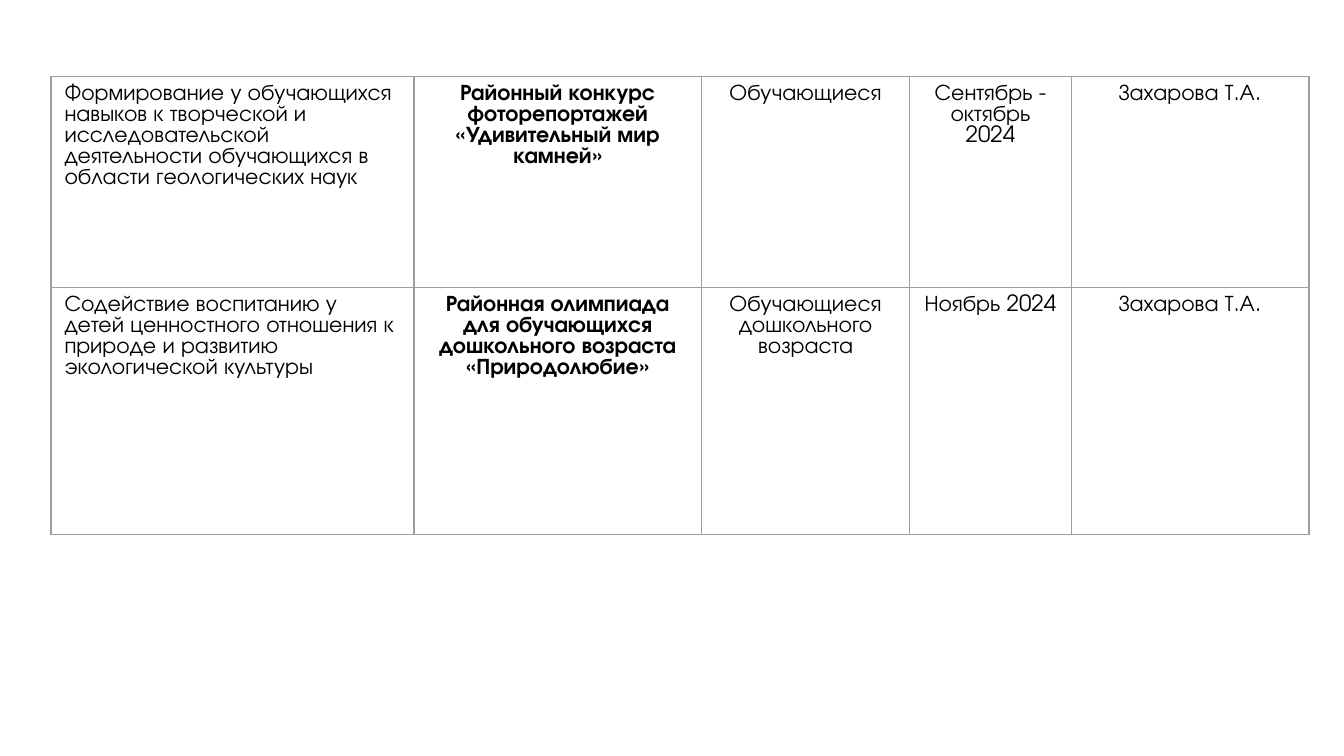
"""Build a slide with a table of district events for pupils."""
from typing import NamedTuple

import pptx
import pptx.dml.color
import pptx.enum.text
import pptx.oxml
import pptx.oxml.ns
import pptx.slide
import pptx.table
import pptx.util
from pptx.util import Inches

BLACK = pptx.dml.color.RGBColor(0x00, 0x00, 0x00)
GREY = pptx.dml.color.RGBColor(0x9E, 0x9E, 0x9E)
FONT = "TeX Gyre Adventor"
WIDTHS = (2.7, 2.14, 1.55, 1.2, 1.77)
SIDES = ("lnL", "lnR", "lnT", "lnB")


class Event(NamedTuple):
    height: float
    goal: str
    title: str
    group: str
    date: str
    lead: str


EVENTS = (
    Event(
        1.57,
        "Формирование у обучающихся навыков к творческой и исследовательской "
        "деятельности обучающихся в области геологических наук",
        "Районный конкурс фоторепортажей «Удивительный мир камней»",
        "Обучающиеся",
        "Сентябрь - октябрь 2024",
        "Захарова Т.А.",
    ),
    Event(
        1.84,
        "Содействие воспитанию у детей ценностного отношения к природе "
        "и развитию экологической культуры",
        "Районная олимпиада для обучающихся дошкольного возраста «Природолюбие»",
        "Обучающиеся дошкольного возраста",
        "Ноябрь 2024",
        "Захарова Т.А.",
    ),
)


def add_edges(cell: pptx.table._Cell) -> None:
    props = cell._tc.get_or_add_tcPr()
    for index, side in enumerate(SIDES):
        edge = pptx.oxml.parse_xml(
            f'<a:{side} {pptx.oxml.ns.nsdecls("a")} w="{pptx.util.Pt(0.75)}">'
            f'<a:solidFill><a:srgbClr val="{GREY}"/></a:solidFill></a:{side}>'
        )
        props.insert(index, edge)


def fill_cell(cell: pptx.table._Cell, text: str, column: int) -> None:
    cell.text_frame.text = text
    cell.fill.background()
    para = cell.text_frame.paragraphs[0]
    para.line_spacing = pptx.util.Pt(11.25)
    align = pptx.enum.text.PP_ALIGN
    para.alignment = align.CENTER if column else align.LEFT
    font = para.runs[0].font
    font.name = FONT
    font.size = pptx.util.Pt(12)
    font.bold = column == 1
    font.color.rgb = BLACK
    add_edges(cell)


def add_events(slide: pptx.slide.Slide) -> None:
    frame = slide.shapes.add_table(
        len(EVENTS), len(WIDTHS), Inches(0.38), Inches(0.57),
        Inches(sum(WIDTHS)), Inches(sum(event.height for event in EVENTS)),
    )
    table = frame.table
    table.first_row = table.horz_banding = False
    for column, width in zip(table.columns, WIDTHS):
        column.width = Inches(width)
    for row, event in zip(table.rows, EVENTS):
        row.height = Inches(event.height)
        for index, text in enumerate(event[1:]):
            fill_cell(row.cells[index], text, index)


def main() -> None:
    deck = pptx.Presentation()
    deck.slide_width = Inches(10)
    deck.slide_height = Inches(10 * 9 / 16)
    add_events(deck.slides.add_slide(deck.slide_layouts[6]))
    deck.save("out.pptx")


if __name__ == "__main__":
    main()
